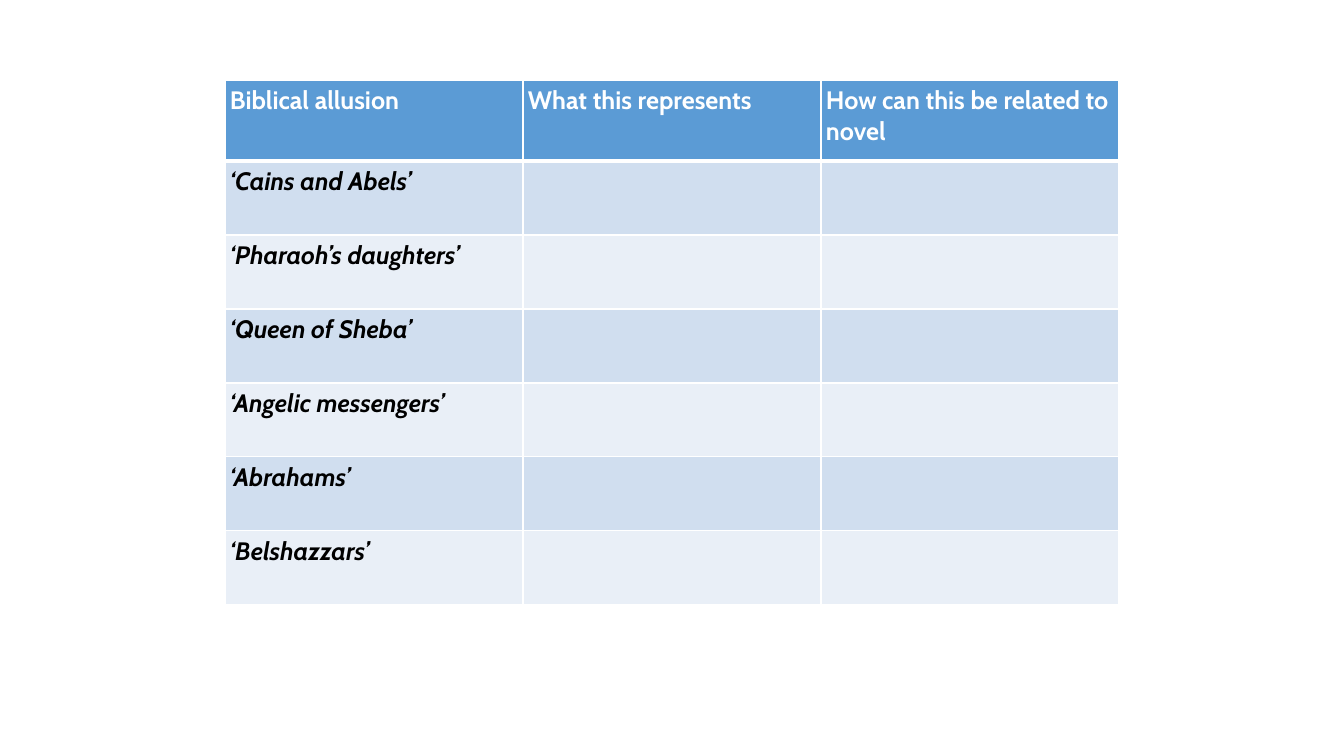
from lxml import etree
from pptx import Presentation
from pptx import util as u
from pptx.dml.color import RGBColor
from pptx.oxml import ns

PX = 914400 / 100.8  # EMU in one px

WHITE = RGBColor(0xFF, 0xFF, 0xFF)
BLACK = RGBColor(0x00, 0x00, 0x00)
HEADER_BLUE = RGBColor(0x5B, 0x9B, 0xD5)
BANDS = [RGBColor(0xD0, 0xDE, 0xEF), RGBColor(0xE9, 0xEF, 0xF7)]

HEADINGS = ["Biblical allusion", "What this represents",
            "How can this be related to novel"]
ALLUSIONS = ["‘Cains and Abels’", "‘Pharaoh’s daughters’", "‘Queen of Sheba’",
             "‘Angelic messengers’", "‘Abrahams’", "‘Belshazzars’"]

LEFT, TOP = 225, 80
COLUMN_WIDTH, HEADER_HEIGHT, ROW_HEIGHT = 298, 81, 74
CELL_MARGIN = 5

HEADER_FONT = {"name": "Cabin", "size": u.Pt(18), "bold": True, "italic": False}
ALLUSION_FONT = {**HEADER_FONT, "italic": True}


def px(length):
    return u.Emu(round(length * PX))


def set_borders(cell, widths):
    """Draw white cell borders; widths maps each side to points."""
    properties = cell._tc.get_or_add_tcPr()
    for side in ("L", "R", "T", "B"):
        line = etree.SubElement(properties, ns.qn(f"a:ln{side}"),
                                w=str(u.Pt(widths[side])))
        fill = etree.SubElement(line, ns.qn("a:solidFill"))
        etree.SubElement(fill, ns.qn("a:srgbClr"), val=str(WHITE))


def format_cell(cell, content, fill, font, color, widths):
    set_borders(cell, widths)
    cell.fill.solid()
    cell.fill.fore_color.rgb = fill
    for side in ("left", "right", "top", "bottom"):
        setattr(cell, f"margin_{side}", px(CELL_MARGIN))
    paragraph = cell.text_frame.paragraphs[0]
    if content:
        paragraph.add_run().text = content
    for target in [paragraph, *paragraph.runs]:
        for name, value in font.items():
            setattr(target.font, name, value)
        target.font.color.rgb = color


def add_allusion_table(slide):
    rows = [HEADINGS] + [[allusion, "", ""] for allusion in ALLUSIONS]
    heights = [HEADER_HEIGHT] + [ROW_HEIGHT] * len(ALLUSIONS)
    table = slide.shapes.add_table(
        len(rows), len(HEADINGS), px(LEFT), px(TOP),
        px(COLUMN_WIDTH * len(HEADINGS)), px(sum(heights))).table
    for column in table.columns:
        column.width = px(COLUMN_WIDTH)

    for index, (contents, height) in enumerate(zip(rows, heights)):
        table.rows[index].height = px(height)
        # Thick rule between the header and the first allusion
        widths = {"L": 1, "R": 1, "T": 3 if index == 1 else 1,
                  "B": 3 if index == 0 else 1}
        if index == 0:
            style = HEADER_BLUE, HEADER_FONT, WHITE
        else:
            style = BANDS[(index - 1) % 2], ALLUSION_FONT, BLACK
        for cell, content in zip(table.rows[index].cells, contents):
            format_cell(cell, content, *style, widths)


def main():
    presentation = Presentation()
    presentation.slide_width = px(1344)
    presentation.slide_height = px(756)
    # The slide has no title, so it uses the blank layout
    slide = presentation.slides.add_slide(presentation.slide_layouts[6])
    add_allusion_table(slide)
    presentation.save("out.pptx")


if __name__ == "__main__":
    main()
